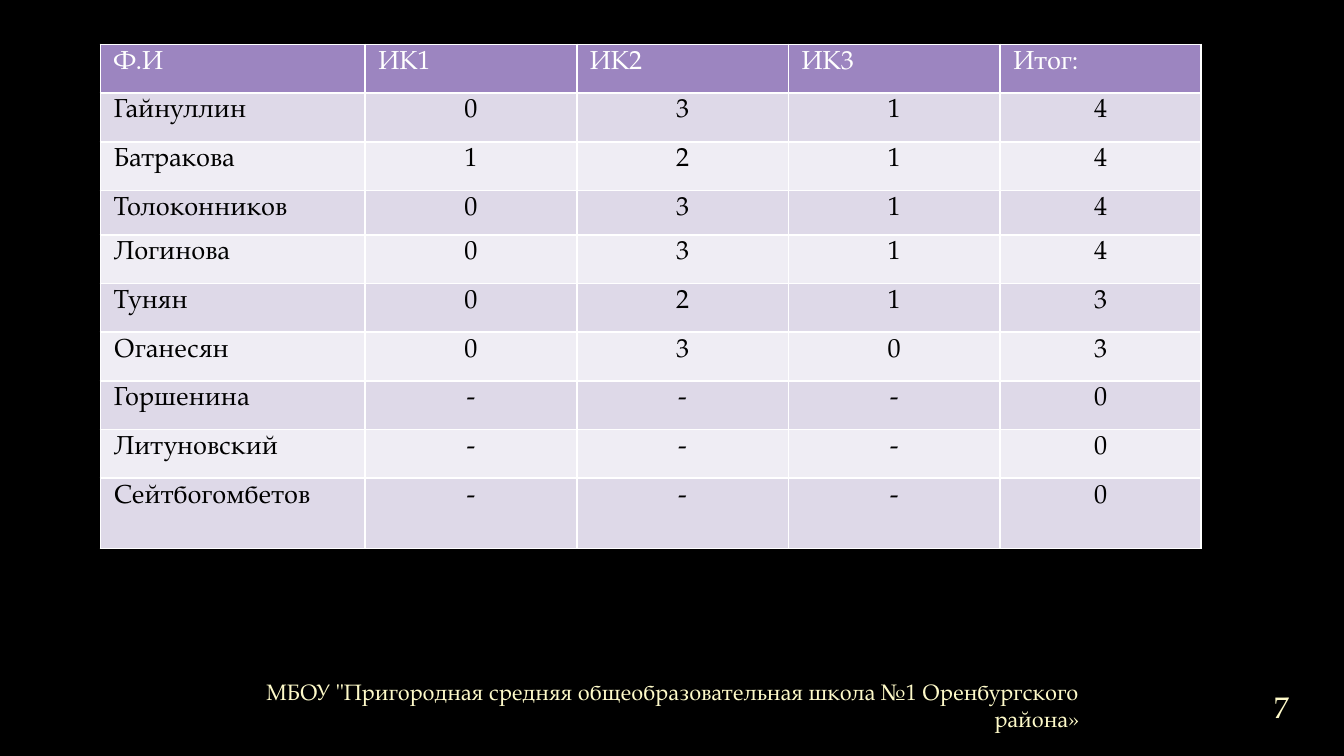
from lxml import etree
from pptx import Presentation
from pptx import util as u
from pptx.dml import color
from pptx.enum import text
from pptx.oxml import ns

HEADER = ("Ф.И", "ИК1", "ИК2", "ИК3", "Итог:")
RESULTS = [
    ("Гайнуллин", "0", "3", "1", "4"),
    ("Батракова", "1", "2", "1", "4"),
    ("Толоконников", "0", "3", "1", "4"),
    ("Логинова", "0", "3", "1", "4"),
    ("Тунян", "0", "2", "1", "3"),
    ("Оганесян", "0", "3", "0", "3"),
    ("Горшенина", "-", "-", "-", "0"),
    ("Литуновский", "-", "-", "-", "0"),
    ("Сейтбогомбетов", "-", "-", "-", "0"),
]
SCHOOL = 'МБОУ "Пригородная средняя общеобразовательная школа №1 Оренбургского района»'
PAGE_NUMBER = "7"

THEME = {
    "font": "TeX Gyre Pagella",
    "background": "000000",
    "header": "9C85C0",
    "bands": ("DED9E8", "EFEDF4"),
    "header_text": "FFFFFF",
    "body_text": "000000",
    "footer_text": "FEFAC9",
    "border": "FFFFFF",
    "table_size": 14,
    "footer_size": 12,
    "page_size": 16,
}
COLUMN_WIDTHS = (5, 4, 4, 4, 3.8)
ROW_HEIGHTS = (0.92,) * 3 + (0.84,) + (0.92,) * 5 + (1.33,)
ALIGN = text.PP_ALIGN


def rgb(name):
    return color.RGBColor.from_string(name)


def write(frame, content, size, ink, align):
    paragraph = frame.paragraphs[0]
    paragraph.alignment = align
    run = paragraph.add_run()
    run.text = content
    run.font.name = THEME["font"]
    run.font.size = u.Pt(size)
    run.font.bold = False
    run.font.color.rgb = rgb(ink)


def add_borders(cell):
    properties = cell._tc.get_or_add_tcPr()
    for index, side in enumerate(("lnL", "lnR", "lnT", "lnB")):
        line = etree.Element(ns.qn(f"a:{side}"), w=str(u.Pt(1)))
        fill = etree.SubElement(line, ns.qn("a:solidFill"))
        etree.SubElement(fill, ns.qn("a:srgbClr"), val=THEME["border"])
        properties.insert(index, line)


def fill_cell(cell, content, row, column):
    is_header = row == 0
    cell.margin_left = cell.margin_right = u.Cm(0.25)
    cell.margin_top = cell.margin_bottom = u.Cm(0.11)
    cell.fill.solid()
    cell.fill.fore_color.rgb = rgb(THEME["header"] if is_header else THEME["bands"][(row - 1) % 2])
    add_borders(cell)
    ink = THEME["header_text" if is_header else "body_text"]
    align = ALIGN.LEFT if is_header or column == 0 else ALIGN.CENTER
    write(cell.text_frame, content, THEME["table_size"], ink, align)


def add_footer(slide, content, box, size, align, margins):
    frame = slide.shapes.add_textbox(*map(u.Cm, box)).text_frame
    frame.word_wrap = True
    frame.vertical_anchor = text.MSO_ANCHOR.MIDDLE
    frame.margin_left = frame.margin_right = u.Cm(margins[0])
    frame.margin_top = frame.margin_bottom = u.Cm(margins[1])
    write(frame, content, size, THEME["footer_text"], align)


presentation = Presentation()
presentation.slide_width = u.Cm(25.4)
presentation.slide_height = u.Cm(14.29)
slide = presentation.slides.add_slide(presentation.slide_layouts[6])
slide.background.fill.solid()
slide.background.fill.fore_color.rgb = rgb(THEME["background"])

rows = [HEADER, *RESULTS]
table = slide.shapes.add_table(
    len(rows), len(HEADER), u.Cm(1.9), u.Cm(0.84),
    u.Cm(sum(COLUMN_WIDTHS)), u.Cm(sum(ROW_HEIGHTS)),
).table
for column, width in zip(table.columns, COLUMN_WIDTHS):
    column.width = u.Cm(width)
for table_row, height in zip(table.rows, ROW_HEIGHTS):
    table_row.height = u.Cm(height)
for row, values in enumerate(rows):
    for column, value in enumerate(values):
        fill_cell(table.cell(row, column), value, row, column)

add_footer(slide, SCHOOL, (3.38, 12.93, 17.27, 0.81), THEME["footer_size"], ALIGN.RIGHT, (0.25, 0.13))
add_footer(slide, PAGE_NUMBER, (23.37, 12.88, 1.7, 0.97), THEME["page_size"], ALIGN.CENTER, (0, 0))

presentation.save("out.pptx")
